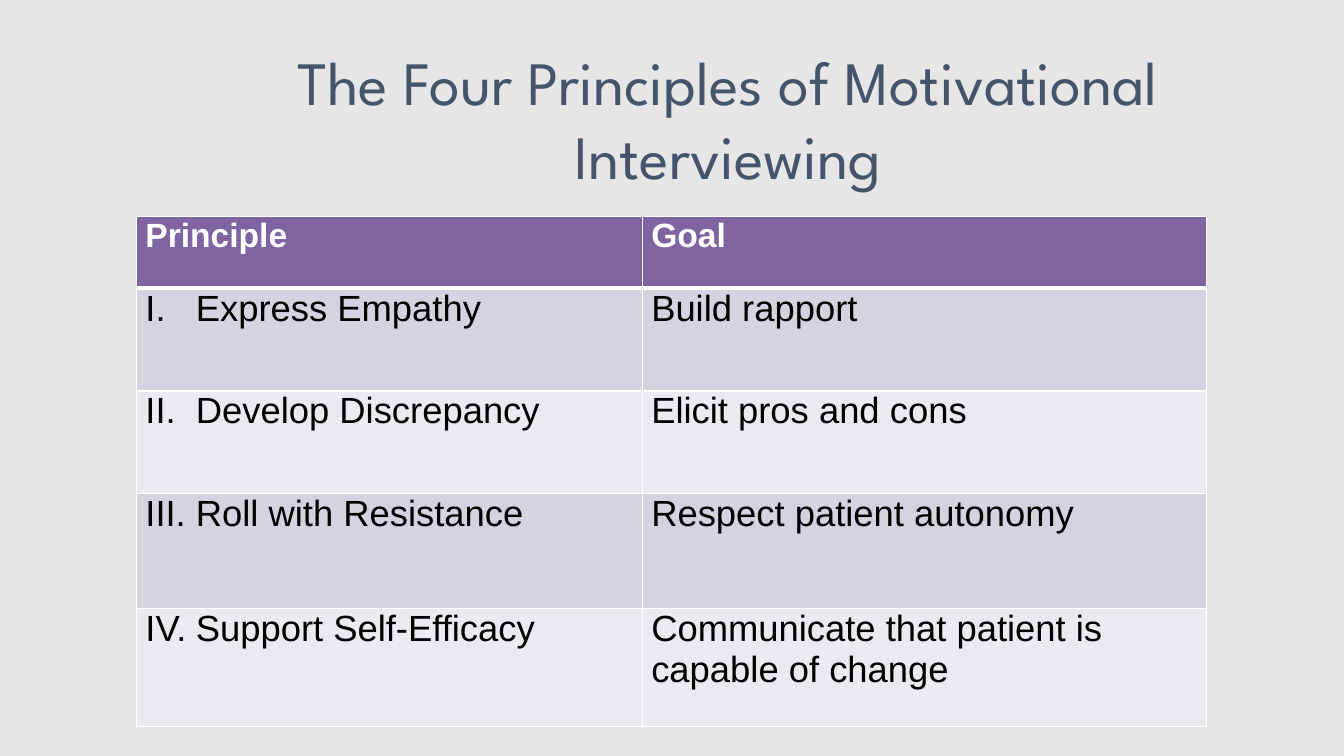
from pptx import Presentation
from pptx.dml.color import RGBColor
from pptx.enum.text import MSO_ANCHOR, MSO_AUTO_SIZE, PP_ALIGN
from pptx.oxml.ns import qn
from pptx.util import Pt
from lxml.etree import SubElement

BACKGROUND = RGBColor(0xE6, 0xE6, 0xE6)
TITLE_COLOR = RGBColor(0x44, 0x54, 0x6A)
HEADER_FILL = RGBColor(0x80, 0x63, 0xA1)
BAND_FILLS = [RGBColor(0xD7, 0xD2, 0xDF), RGBColor(0xEC, 0xEA, 0xEF)]
WHITE = RGBColor(0xFF, 0xFF, 0xFF)
BLACK = RGBColor(0, 0, 0)

COLUMN_SHARES = [5.02, 5.6]
ROW_HEIGHTS = [51.1, 73.4, 73.4, 82.1, 84.2]
CELL_INDENT = 6.5
NUMBER_TAB = 50

HEADINGS = ["Principle", "Goal"]
PRINCIPLES = [
    ("I.\tExpress Empathy", "Build rapport"),
    ("II.\tDevelop Discrepancy", "Elicit pros and cons"),
    ("III.\tRoll with Resistance", "Respect patient autonomy"),
    ("IV.\tSupport Self-Efficacy", "Communicate that patient is capable of change"),
]


def format_font(paragraph, name, size, color, bold=False):
    for run in paragraph.runs:
        run.font.name = name
        run.font.size = Pt(size)
        run.font.color.rgb = color
        run.font.bold = bold


def indent_paragraph(paragraph, indent):
    properties = paragraph._p.get_or_add_pPr()
    properties.set("marL", str(Pt(indent)))
    properties.set("indent", "0")
    return properties


def add_title(slide, left, top, width, height):
    title = slide.shapes.title
    title.left, title.top = Pt(left), Pt(top)
    title.width, title.height = Pt(width), Pt(height)
    text_frame = title.text_frame
    text_frame.text = "The Four Principles of Motivational Interviewing"
    text_frame.auto_size = MSO_AUTO_SIZE.NONE
    text_frame.word_wrap = True
    text_frame.vertical_anchor = MSO_ANCHOR.BOTTOM
    text_frame.margin_left = text_frame.margin_right = 0
    text_frame.margin_top = text_frame.margin_bottom = 0
    paragraph = text_frame.paragraphs[0]
    paragraph.alignment = PP_ALIGN.CENTER
    indent_paragraph(paragraph, 81.4)
    format_font(paragraph, "League Spartan", 44, TITLE_COLOR)


def set_borders(cell, top_width, bottom_width):
    properties = cell._tc.get_or_add_tcPr()
    widths = {"a:lnL": 1, "a:lnR": 1, "a:lnT": top_width, "a:lnB": bottom_width}
    for tag, width in widths.items():
        line = SubElement(properties, qn(tag), w=str(Pt(width)))
        fill = SubElement(line, qn("a:solidFill"))
        SubElement(fill, qn("a:srgbClr"), val=str(WHITE))


def fill_cell(cell, text, row):
    is_header = row == 0
    set_borders(cell, 3 if row == 1 else 1, 3 if is_header else 1)
    cell.fill.solid()
    cell.fill.fore_color.rgb = HEADER_FILL if is_header else BAND_FILLS[(row - 1) % 2]
    cell.margin_left = cell.margin_right = cell.margin_top = cell.margin_bottom = 0
    cell.text_frame.text = text
    paragraph = cell.text_frame.paragraphs[0]
    properties = indent_paragraph(paragraph, CELL_INDENT)
    # Tab stop between the numeral and the principle
    if "\t" in text:
        tabs = SubElement(properties, qn("a:tabLst"))
        SubElement(tabs, qn("a:tab"), pos=str(Pt(NUMBER_TAB)), algn="l")
    if is_header:
        format_font(paragraph, "Arial", 24, WHITE, bold=True)
    else:
        format_font(paragraph, "Arial", 26, BLACK)


def add_principles_table(slide, left, top, width):
    rows = [HEADINGS, *PRINCIPLES]
    table = slide.shapes.add_table(
        len(rows), len(HEADINGS), Pt(left), Pt(top), Pt(width), Pt(sum(ROW_HEIGHTS))
    ).table
    for column, share in zip(table.columns, COLUMN_SHARES):
        column.width = Pt(width * share / sum(COLUMN_SHARES))
    for row, (height, texts) in enumerate(zip(ROW_HEIGHTS, rows)):
        table.rows[row].height = Pt(height)
        for column, text in enumerate(texts):
            fill_cell(table.cell(row, column), text, row)


def main():
    presentation = Presentation()
    presentation.slide_width, presentation.slide_height = Pt(960), Pt(540)
    slide = presentation.slides.add_slide(presentation.slide_layouts[5])
    slide.background.fill.solid()
    slide.background.fill.fore_color.rgb = BACKGROUND
    # Title above, table of principles below
    add_title(slide, 47.5, 30.2, 864, 106.6)
    add_principles_table(slide, 97.4, 154.8, 764.4)
    presentation.save("out.pptx")


if __name__ == "__main__":
    main()
